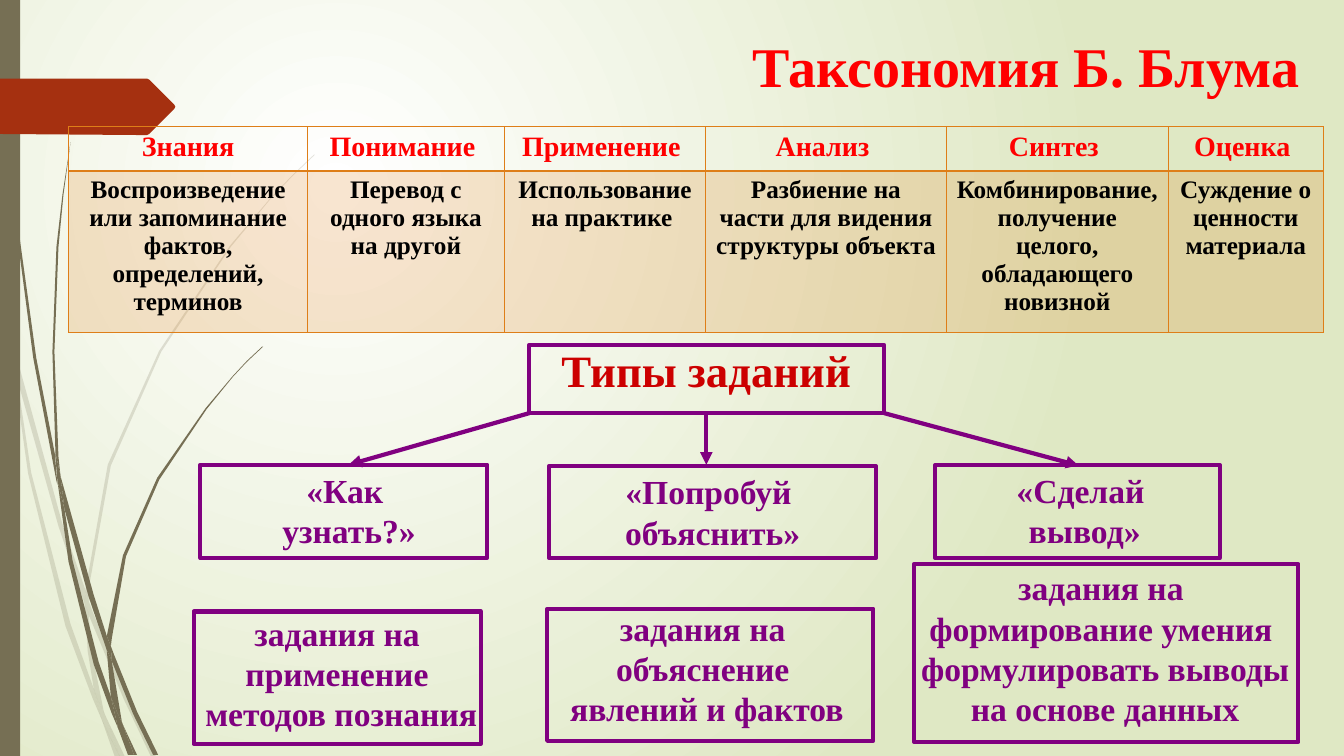
from pptx import Presentation, oxml, util as u
from pptx.dml.color import RGBColor
from pptx.enum import shapes, text
from pptx.oxml import ns

Cm = u.Cm
THEME = {
    "olive": "766F54", "rust": "A53010", "orange": "DE7E18", "purple": "800080",
    "pale": "DFE8C4", "white": "FFFFFF",
    "title": {"size": u.Pt(40), "color": "FF0000"},
    "heading": {"size": u.Pt(32), "color": "CC0000"},
    "label": {"size": u.Pt(24), "color": "800080"},
    "table head": {"size": u.Pt(20), "color": "FF0000"},
    "table body": {"size": u.Pt(18), "color": "000000"},
}
FONT = {"name": "Times New Roman", "bold": True}
NAMESPACE = ns.nsdecls("a", "p")


def paint(target, element, colour, opacity=100):
    target.fill.solid()
    target.fill.fore_color.rgb = RGBColor.from_string(colour)
    if opacity < 100:
        colour_node = next(element.iter(ns.qn("a:srgbClr")))
        colour_node.append(oxml.parse_xml(f'<a:alpha {NAMESPACE} val="{opacity * 1000}"/>'))


def write(text_frame, lines, style):
    for index, line in enumerate(lines):
        paragraph = text_frame.paragraphs[0] if index == 0 else text_frame.add_paragraph()
        paragraph.alignment = text.PP_ALIGN.CENTER
        run = paragraph.add_run()
        run.text = line
        for name, value in {**FONT, "size": style["size"]}.items():
            setattr(run.font, name, value)
        run.font.color.rgb = RGBColor.from_string(style["color"])


presentation = Presentation()
presentation.slide_width, presentation.slide_height = Cm(33.87), Cm(19.05)
slide = presentation.slides.add_slide(presentation.slide_layouts[6])

slide.element.cSld.insert(0, oxml.parse_xml(
    f'<p:bg {NAMESPACE}><p:bgPr><a:gradFill rotWithShape="1"><a:gsLst>'
    f'<a:gs pos="0"><a:srgbClr val="{THEME["white"]}"/></a:gs>'
    f'<a:gs pos="100000"><a:srgbClr val="{THEME["pale"]}"/></a:gs></a:gsLst>'
    '<a:path path="circle"><a:fillToRect l="50000" t="50000" r="100000" b="100000"/></a:path>'
    '</a:gradFill><a:effectLst/></p:bgPr></p:bg>'))

OUTLINE_UNIT = Cm(2.54) / 100
faint_stems = [
    [(11, 350), (9, 322), (0, 282), (0, 299), (10, 344)],
    [(58, 522), (84, 599), (85, 586), (62, 520), (14, 345), (17, 376)],
    [(92, 607), (88, 596), (88, 610), (123, 694), (150, 751), (155, 751), (127, 692)],
    [(119, 751), (124, 751), (105, 711)],
    [(93, 683), (70, 619), (31, 469), (17, 376), (11, 350), (28, 470), (65, 621), (92, 693),
     (101, 714), (99, 707)],
    [(84, 599), (87, 646), (93, 683), (96, 692), (105, 711), (103, 706), (91, 646), (88, 610),
     (88, 608)],
    [(88, 584), (110, 462), (160, 349), (229, 245), (268, 198), (290, 175), (312, 154), (312, 153),
     (289, 175), (268, 197), (228, 244), (158, 348), (107, 461), (85, 584), (85, 586), (88, 596)],
    [(101, 714), (114, 751), (119, 751)],
    [(88, 608), (88, 610), (88, 596), (85, 586), (84, 599)],
    [(96, 692), (93, 683), (99, 707), (101, 714), (119, 751), (105, 711)],
]
solid_stems = [
    [(7, 110), (17, 233), (33, 355), (56, 477), (57, 481), (55, 457), (55, 453), (36, 355),
     (19, 232), (8, 109), (5, 48), (4, 0), (3, 0), (4, 48)],
    [(88, 592), (106, 645), (106, 633), (106, 631), (93, 590), (60, 472), (64, 505)],
    [(113, 649), (110, 641), (111, 656), (132, 708), (152, 749), (157, 749), (136, 706)],
    [(110, 691), (98, 657), (72, 556), (64, 505), (57, 477), (68, 557), (93, 659), (111, 708),
     (117, 722), (116, 717)],
    [(60, 472), (58, 453), (54, 349), (58, 245), (63, 193), (70, 141), (62, 193), (56, 245),
     (52, 349), (55, 449)],
    [(133, 749), (136, 749), (122, 719)],
    [(57, 477), (64, 505), (60, 472), (55, 449), (55, 453)],
    [(111, 633), (125, 552), (158, 476), (205, 406), (231, 374), (245, 359), (261, 344), (260, 344),
     (245, 358), (231, 373), (204, 405), (156, 474), (122, 551), (106, 631), (110, 641)],
    [(117, 722), (127, 749), (131, 749)],
    [(106, 645), (110, 691), (116, 706), (122, 719), (121, 716), (111, 656), (109, 651)],
    [(106, 645), (109, 651), (111, 656), (110, 641), (106, 631), (106, 633)],
    [(116, 706), (110, 691), (116, 717), (117, 722), (130, 749), (133, 749), (122, 719)],
]
bar = [(0, 0), (20, 0), (20, 750), (0, 750)]
pointer = [(173, 108), (148, 133), (146, 134), (136, 134), (0, 133), (0, 78), (136, 78),
           (146, 78), (148, 79), (173, 104), (174, 106)]
for colour, opacity, outlines in [
    ("olive", 20, faint_stems), ("olive", 100, solid_stems),
    ("olive", 100, [bar]), ("rust", 100, [pointer]),
]:
    for outline in outlines:
        if outline is bar:
            shape = slide.shapes.add_shape(shapes.MSO_SHAPE.RECTANGLE, 0, 0, Cm(.51), Cm(19.05))
        else:
            builder = slide.shapes.build_freeform(*outline[0], scale=OUTLINE_UNIT)
            builder.add_line_segments(outline[1:], close=True)
            shape = builder.convert_to_shape()
        paint(shape, shape.element, THEME[colour], opacity)
        shape.line.fill.background()
        shape.shadow.inherit = False

captions = [
    ("label", ["«Как ", "узнать?»"], (6.84, 11.71, 3.91, 2.31), (5.05, 11.71, 7.23, 2.35)),
    ("label", ["«Попробуй ", "объяснить»"], (15.47, 11.75, 4.98, 2.31), (13.83, 11.75, 8.25, 2.31)),
    ("label", ["«Сделай ", "вывод»"], (25.34, 11.72, 3.99, 2.31), (23.57, 11.72, 7.17, 2.34)),
    ("heading", ["Типы заданий"], (13.85, 8.51, 7.9, 1.63), (13.34, 8.69, 8.94, 1.72)),
    ("label", ["задания на ", "применение ", "методов познания"],
     (4.88, 15.31, 7.44, 3.33), (4.88, 15.41, 7.24, 3.33)),
    ("label", ["задания на ", "объяснение ", "явлений и фактов"],
     (14.07, 15.19, 7.49, 3.33), (13.79, 15.34, 8.22, 3.33)),
    ("label", ["задания на ", "формирование умения ", "формулировать выводы", "на основе данных"],
     (22.91, 14.17, 9.88, 4.37), (23.04, 14.21, 9.68, 4.49)),
    ("title", ["Таксономия Б. Блума"], (18.64, .67, 14.43, 1.96), None),
]
for style, lines, place, border in captions:
    caption = slide.shapes.add_textbox(*map(Cm, place))
    caption.text_frame.word_wrap = False
    caption.text_frame.auto_size = text.MSO_AUTO_SIZE.SHAPE_TO_FIT_TEXT
    write(caption.text_frame, lines, THEME[style])
    if border:
        frame = slide.shapes.add_shape(shapes.MSO_SHAPE.RECTANGLE, *map(Cm, border))
        frame.fill.background()
        frame.line.color.rgb = RGBColor.from_string(THEME["purple"])
        frame.line.width = u.Pt(3)
        frame.shadow.inherit = False

for ends in [(13.34, 10.41, 8.79, 11.71), (22.28, 10.41, 27.18, 11.73), (17.8, 10.41, 17.8, 11.71)]:
    arrow = slide.shapes.add_connector(shapes.MSO_CONNECTOR.STRAIGHT, *map(Cm, ends))
    arrow.line.color.rgb = RGBColor.from_string(THEME["purple"])
    arrow.line.width = u.Pt(3)
    arrow.line._get_or_add_ln().append(oxml.parse_xml(f'<a:tailEnd {NAMESPACE} type="triangle"/>'))
    arrow.element.spPr.append(oxml.parse_xml(f"<a:effectLst {NAMESPACE}/>"))

levels = [
    (6.02, "Знания", "Воспроизведение или запоминание фактов, определений, терминов"),
    (4.96, "Понимание ", "Перевод с одного языка на другой"),
    (5.07, "Применение ", "Использование на практике "),
    (6.07, "Анализ ", "Разбиение на части для видения структуры объекта"),
    (5.59, "Синтез ", "Комбинирование, получение целого, обладающего новизной"),
    (3.91, "Оценка ", "Суждение о ценности материала"),
]
row_heights = [1.12, 4.06]
table = slide.shapes.add_table(
    2, len(levels), Cm(1.73), Cm(3.19),
    Cm(sum(level[0] for level in levels)), Cm(sum(row_heights))).table
table.first_row = table.horz_banding = False
for row, height in zip(table.rows, row_heights):
    row.height = Cm(height)
for column, (width, *texts) in enumerate(levels):
    table.columns[column].width = Cm(width)
    for row, wording in enumerate(texts):
        cell = table.cell(row, column)
        properties = cell._tc.get_or_add_tcPr()
        if row == 0:
            cell.fill.background()
        else:
            paint(cell, properties, THEME["orange"], 20)
        for index, side in enumerate("LRTB"):
            thick = (row, side) in [(0, "B"), (1, "T")]
            properties.insert(index, oxml.parse_xml(
                f'<a:ln{side} {NAMESPACE} w="{u.Pt(2 if thick else 1)}"><a:solidFill>'
                f'<a:srgbClr val="{THEME["orange"]}"/></a:solidFill></a:ln{side}>'))
        write(cell.text_frame, [wording], THEME["table body" if row else "table head"])

presentation.save("out.pptx")
